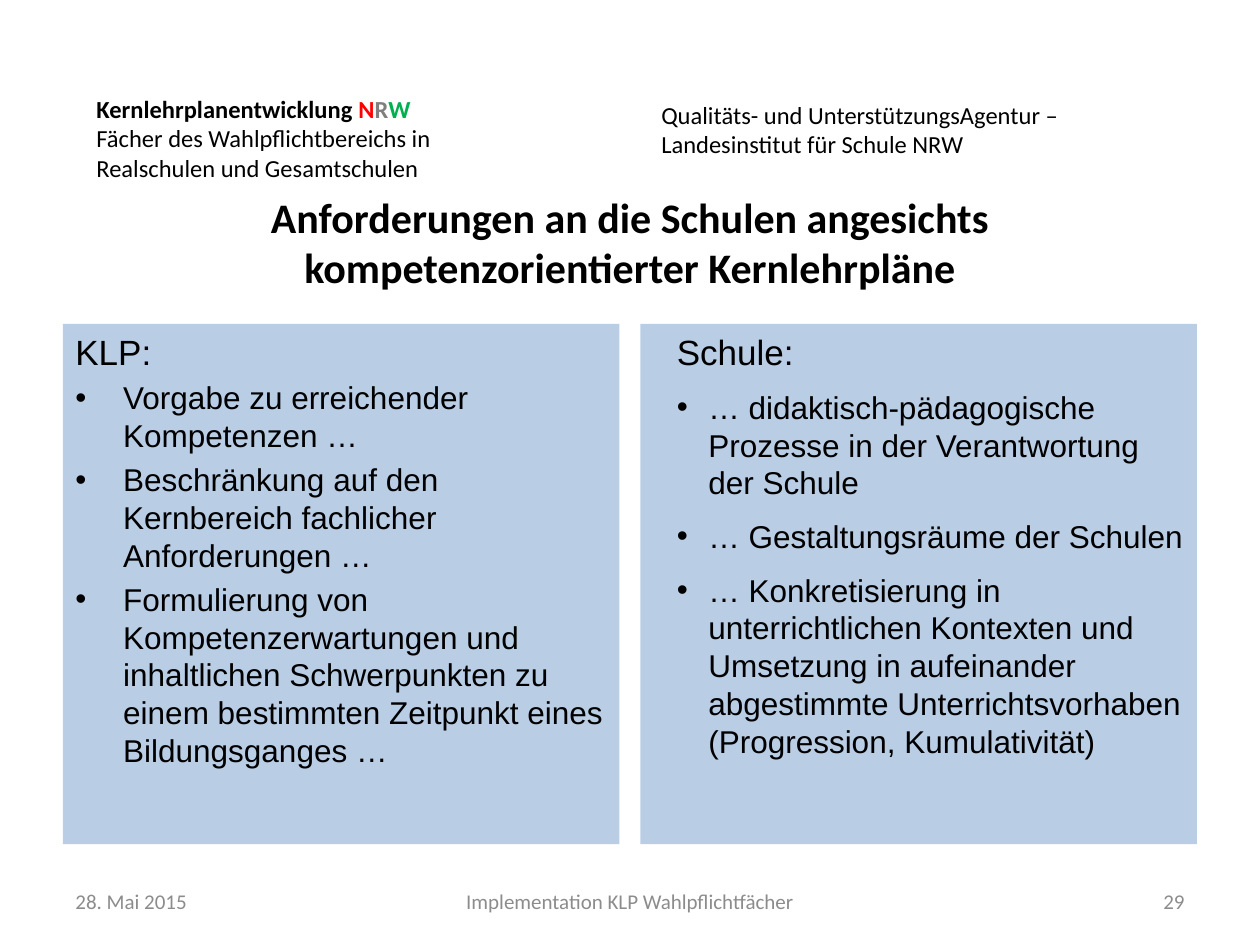
from pptx import Presentation, util as u
from pptx.dml.color import RGBColor
from pptx.enum import shapes, text
from pptx.oxml.ns import qn
from lxml import etree

BLACK = RGBColor(0x00, 0x00, 0x00)
RED = RGBColor(0xFF, 0x00, 0x00)
GREY = RGBColor(0x7F, 0x7F, 0x7F)
GREEN = RGBColor(0x00, 0xB0, 0x50)
FOOTER_GREY = RGBColor(0x8C, 0x8C, 0x8C)
PANEL_BLUE = RGBColor(0xB9, 0xCD, 0xE5)

LEFT, CENTER, RIGHT = text.PP_ALIGN.LEFT, text.PP_ALIGN.CENTER, text.PP_ALIGN.RIGHT
TOP, MIDDLE = text.MSO_ANCHOR.TOP, text.MSO_ANCHOR.MIDDLE


class SlideBuilder:
    """Hold the style and current slide, placing elements on a grid of 120 columns by 90 rows."""

    columns, rows = 120, 90
    heading_font, body_font = "Calibri", "Arial"

    def __init__(self, deck):
        self.cell_width = deck.slide_width / self.columns
        self.cell_height = deck.slide_height / self.rows
        self.slide = deck.slides.add_slide(deck.slide_layouts[6])

    def area(self, column, row, width, height):
        return (u.Emu(round(column * self.cell_width)), u.Emu(round(row * self.cell_height)),
                u.Emu(round(width * self.cell_width)), u.Emu(round(height * self.cell_height)))

    def style(self, paragraph, size, font, color=BLACK, bold=False, align=LEFT):
        paragraph.alignment = align
        paragraph.font.size = u.Pt(size)
        paragraph.font.name = font
        paragraph.font.bold = bold
        if color is not None:
            paragraph.font.color.rgb = color

    def label(self, area, lines, size, color=BLACK, bold=False, align=LEFT, anchor=MIDDLE):
        frame = self.slide.shapes.add_textbox(*self.area(*area)).text_frame
        frame.word_wrap = True
        frame.vertical_anchor = anchor
        for index, line in enumerate(lines):
            paragraph = frame.paragraphs[0] if index == 0 else frame.add_paragraph()
            paragraph.text = line
            self.style(paragraph, size, self.heading_font, color, bold, align)
        return frame

    def brand_line(self, paragraph, parts):
        for wording, color in parts:
            run = paragraph.add_run()
            run.text = wording
            run.font.color.rgb = color
        self.style(paragraph, 14, self.heading_font, color=None, bold=True)

    def panel(self, area, heading, points, margin, hanging, gap):
        box = self.slide.shapes.add_shape(shapes.MSO_SHAPE.RECTANGLE, *self.area(*area))
        box.shadow.inherit = False
        box.fill.solid()
        box.fill.fore_color.rgb = PANEL_BLUE
        box.line.fill.background()
        frame = box.text_frame
        frame.word_wrap = True
        frame.vertical_anchor = TOP
        title = frame.paragraphs[0]
        title.text = heading
        title._p.get_or_add_pPr().set("marL", str(u.Inches(margin - hanging)))
        self.style(title, 20, self.body_font)
        for point in points:
            paragraph = frame.add_paragraph()
            paragraph.text = point
            properties = paragraph._p.get_or_add_pPr()
            properties.set("marL", str(u.Inches(margin)))
            properties.set("indent", str(u.Inches(-hanging)))
            etree.SubElement(properties, qn("a:buFont")).set("typeface", self.body_font)
            etree.SubElement(properties, qn("a:buChar")).set("char", "•")
            paragraph.space_before = u.Pt(gap)
            self.style(paragraph, 18, self.body_font)


def main():
    deck = Presentation()
    deck.slide_width, deck.slide_height = u.Inches(10), u.Inches(7.5)
    page = SlideBuilder(deck)

    project = page.label((8, 5.64, 40.7, 15),
                         ["", "Fächer des Wahlpflichtbereichs in", "Realschulen und Gesamtschulen"], 14)
    page.brand_line(project.paragraphs[0], [("Kernlehrplanentwicklung ", BLACK),
                                            ("N", RED), ("R", GREY), ("W", GREEN)])
    page.label((61.8, 4.8, 40.8, 15),
               ["Qualitäts- und UnterstützungsAgentur –", "Landesinstitut für Schule NRW"], 14)
    page.label((6.12, 17.64, 107.76, 11.28),
               ["Anforderungen an die Schulen angesichts kompetenzorientierter Kernlehrpläne"],
               24, bold=True, align=CENTER, anchor=TOP)

    page.panel((6, 30.84, 53, 49.56), "KLP:", [
        "Vorgabe zu erreichender Kompetenzen …",
        "Beschränkung auf den Kernbereich fachlicher Anforderungen …",
        "Formulierung von Kompetenzerwartungen und inhaltlichen Schwerpunkten zu "
        "einem bestimmten Zeitpunkt eines Bildungsganges …",
    ], margin=0.38, hanging=0.38, gap=3.6)
    page.panel((61, 30.84, 53, 49.56), "Schule:", [
        "… didaktisch-pädagogische Prozesse in der Verantwortung der Schule",
        "… Gestaltungsräume der Schulen",
        "… Konkretisierung in unterrichtlichen Kontexten und Umsetzung in aufeinander "
        "abgestimmte Unterrichtsvorhaben (Progression, Kumulativität)",
    ], margin=0.44, hanging=0.25, gap=9)

    for column, width, wording, align in [
        (6, 28, "28. Mai 2015", LEFT),
        (41, 38, "Implementation KLP Wahlpflichtfächer", CENTER),
        (86, 28, "29", RIGHT),
    ]:
        page.label((column, 83.4, width, 4.8), [wording], 12, FOOTER_GREY, align=align)

    deck.save("out.pptx")


if __name__ == "__main__":
    main()
